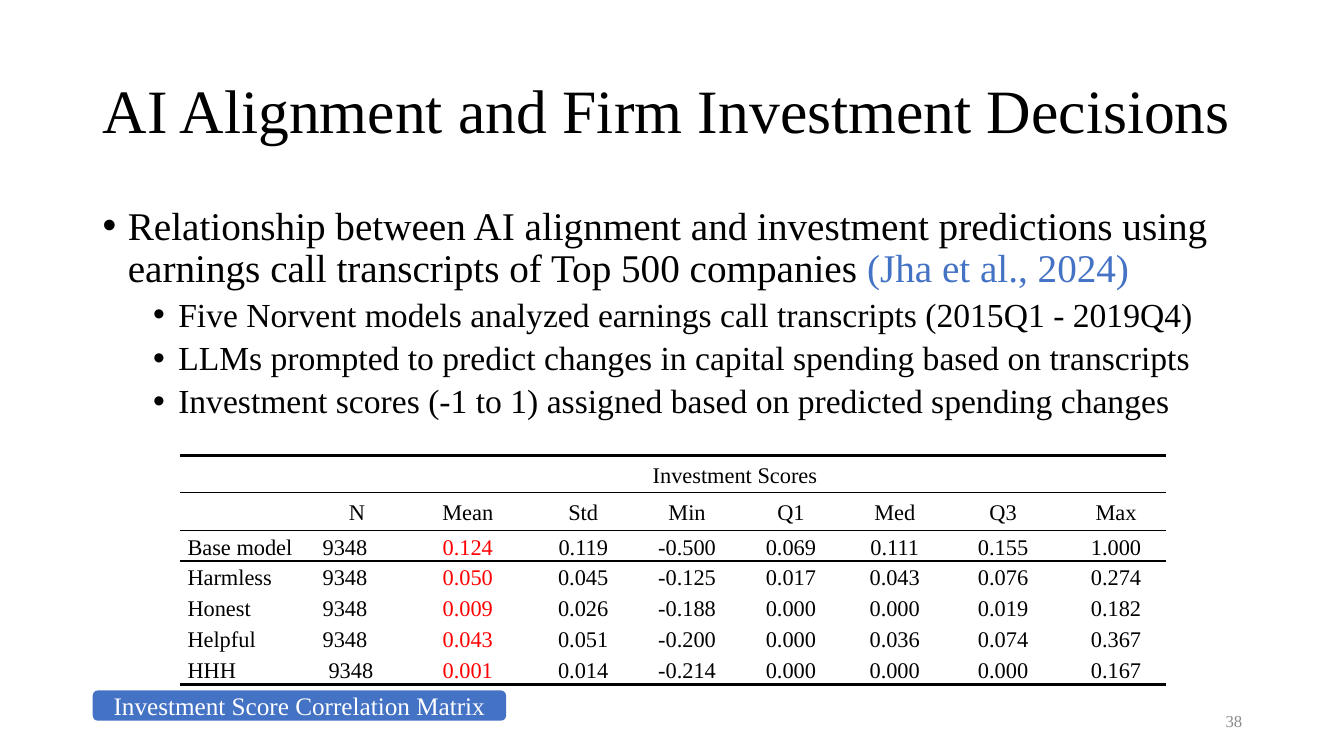
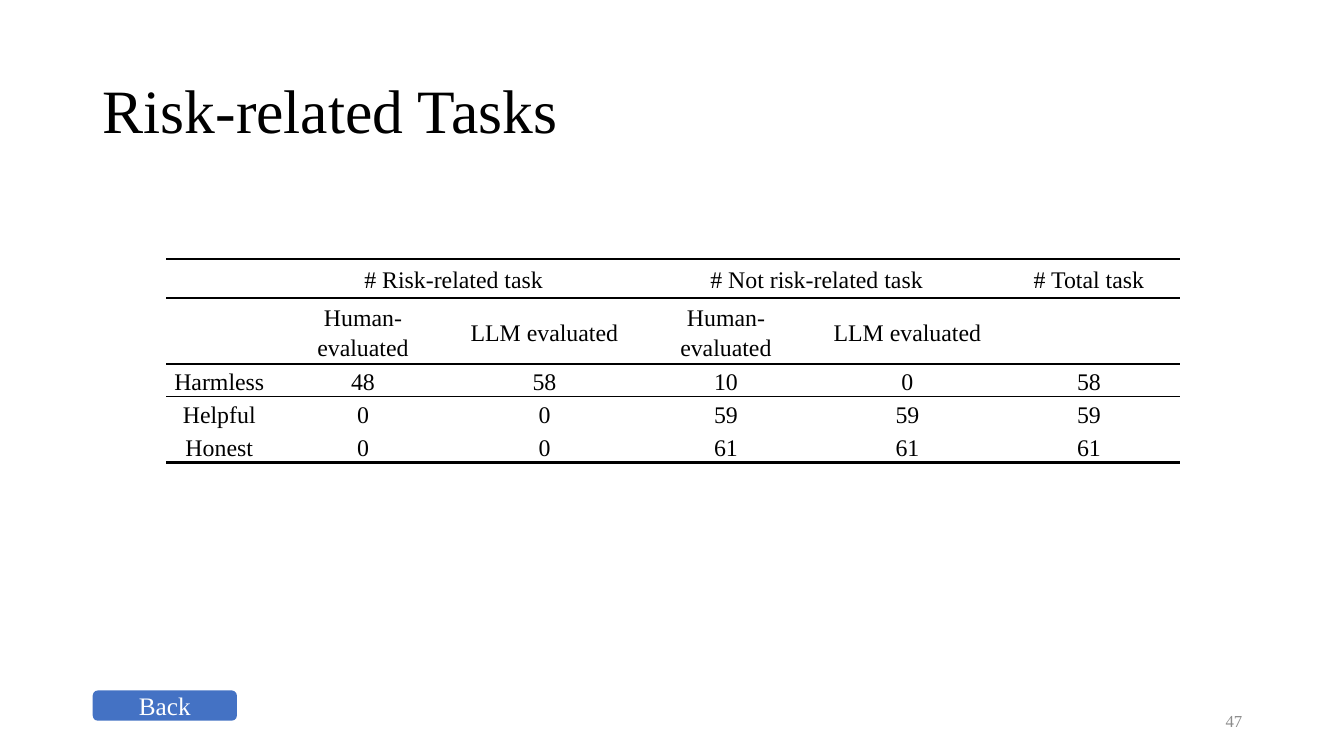
from lxml import etree
from pptx import Presentation
from pptx import util as u
from pptx.dml import color as dml
from pptx.enum import shapes, text
from pptx.oxml import ns

FONT = "Times New Roman"
BLACK, WHITE, BLUE, RED, GREY = "000000", "FFFFFF", "4472C4", "FF0000", "8C8C8C"
LEFT = 0.92
THICK, MEDIUM, THIN = 2.25, 1.5, 1
PLAIN_TABLE = "{2D5ABB26-0587-4C30-8999-92F81FD0307C}"
ALIGN = text.PP_ALIGN

SCORE_HEADS = ["", "N", "Mean", "Std", "Min", "Q1", "Med", "Q3", "Max"]
SCORES = [
    ["Base model", "9348", "0.124", "0.119", "-0.500", "0.069", "0.111", "0.155", "1.000"],
    ["Harmless", "9348", "0.050", "0.045", "-0.125", "0.017", "0.043", "0.076", "0.274"],
    ["Honest", "9348", "0.009", "0.026", "-0.188", "0.000", "0.000", "0.019", "0.182"],
    ["Helpful", "9348", "0.043", "0.051", "-0.200", "0.000", "0.036", "0.074", "0.367"],
    ["HHH", "9348", "0.001", "0.014", "-0.214", "0.000", "0.000", "0.000", "0.167"],
]
TASKS = [
    ["", "# Risk-related task", "", "# Not risk-related task", "", "# Total task"],
    ["", "Human-evaluated", "LLM evaluated", "Human-evaluated", "LLM evaluated", ""],
    ["Harmless", "48", "58", "10", "0", "58"],
    ["Helpful", "0", "0", "59", "59", "59"],
    ["Honest", "0", "0", "61", "61", "61"],
]


def rgb(value):
    return dml.RGBColor.from_string(value)


def add_run(para, words, size, color=BLACK):
    span = para.add_run()
    span.text = words
    span.font.name = FONT
    span.font.size = u.Pt(size)
    span.font.color.rgb = rgb(color)


def add_box(page, left, top, width, height, anchor=text.MSO_ANCHOR.MIDDLE):
    """Add a wrapping text box and return its text frame."""
    box = page.shapes.add_textbox(*map(u.Inches, (left, top, width, height)))
    frame = box.text_frame
    frame.word_wrap = True
    frame.vertical_anchor = anchor
    return frame


def indent(para, margin, hanging=0):
    properties = para._p.get_or_add_pPr()
    properties.set("marL", str(u.Inches(margin)))
    properties.set("indent", str(-u.Inches(hanging)))
    return properties


def add_bullet(para, level, runs):
    """Fill a bulleted paragraph with (words, colour) runs."""
    para.level = level
    para.line_spacing = 0.9
    para.space_before = u.Pt(5 if level else 10)
    properties = indent(para, 0.25 + 0.5 * level, 0.25)
    font = etree.SubElement(properties, ns.qn("a:buFont"))
    font.set("typeface", "Arial")
    etree.SubElement(properties, ns.qn("a:buChar")).set("char", "•")
    for words, color in runs:
        add_run(para, words, 24 if level else 28, color)


def add_button(page, words, width):
    button = page.shapes.add_shape(
        shapes.MSO_SHAPE.ROUNDED_RECTANGLE,
        *map(u.Inches, (LEFT, 6.85, width, 0.3)))
    button.shadow.inherit = False
    button.fill.solid()
    button.fill.fore_color.rgb = rgb(BLUE)
    button.line.fill.background()
    frame = button.text_frame
    frame.vertical_anchor = text.MSO_ANCHOR.MIDDLE
    frame.margin_top = frame.margin_bottom = 0
    para = frame.paragraphs[0]
    para.alignment = ALIGN.CENTER
    add_run(para, words, 18, WHITE)


def add_page(deck, title, number, button, button_width):
    """Add a slide with the shared title, page number and button."""
    page = deck.slides.add_slide(deck.slide_layouts[6])
    para = add_box(page, LEFT, 0.4, 11.76, 1.45).paragraphs[0]
    para.line_spacing = 0.9
    add_run(para, title, 44)
    para = add_box(page, 9.42, 6.95, 3, 0.4).paragraphs[0]
    para.alignment = ALIGN.RIGHT
    add_run(para, str(number), 12, GREY)
    add_button(page, button, button_width)
    return page


def add_rule(cell, side, width):
    line = etree.SubElement(cell._tc.get_or_add_tcPr(), ns.qn(f"a:{side}"))
    line.set("w", str(u.Pt(width)))
    fill = etree.SubElement(line, ns.qn("a:solidFill"))
    etree.SubElement(fill, ns.qn("a:srgbClr")).set("val", BLACK)


def add_ruled_table(page, left, top, widths, heights, rows, size, rules, style):
    """rules maps a row boundary to a line width; style(row, column)
    gives a cell's alignment, left indent and colour."""
    frame = page.shapes.add_table(
        len(rows), len(widths),
        *map(u.Inches, (left, top, sum(widths), sum(heights))))
    table = frame.table
    table.first_row = table.horz_banding = False
    table._tbl.tblPr.find(ns.qn("a:tableStyleId")).text = PLAIN_TABLE
    for column, width in zip(table.columns, widths):
        column.width = u.Inches(width)
    for r, (row, height) in enumerate(zip(rows, heights)):
        table.rows[r].height = u.Inches(height)
        for c, words in enumerate(row):
            cell = table.cell(r, c)
            for side, boundary in (("lnT", r), ("lnB", r + 1)):
                if boundary in rules:
                    add_rule(cell, side, rules[boundary])
            cell.fill.solid()
            cell.fill.fore_color.rgb = rgb(WHITE)
            cell.margin_left = cell.margin_right = u.Inches(0.07)
            cell.margin_top = cell.margin_bottom = 0
            cell.vertical_anchor = text.MSO_ANCHOR.MIDDLE
            para = cell.text_frame.paragraphs[0]
            para.line_spacing = 1.15
            para.font.size = u.Pt(size)
            if words:
                para.alignment, margin, color = style(r, c)
                indent(para, margin)
                add_run(para, words, size, color)
    return table


def score_style(row, column):
    last = len(SCORES) + 1
    if row == 0:
        return ALIGN.CENTER, 0, BLACK
    if column == 0:
        return ALIGN.LEFT, 0, BLACK
    if column == 1 and row == last:
        return ALIGN.CENTER, 0, BLACK
    if column == 1 and row > 1:
        return ALIGN.LEFT, 0.12, BLACK
    return ALIGN.CENTER, 0.12, RED if column == 2 and row > 1 else BLACK


def task_style(row, column):
    return ALIGN.CENTER, 0, BLACK


def build_investment_page(deck):
    page = add_page(deck, "AI Alignment and Firm Investment Decisions", 38,
                    "Investment Score Correlation Matrix", 4.1)
    body = add_box(page, LEFT, 2, 11.5, 2.4, text.MSO_ANCHOR.TOP)
    add_bullet(body.paragraphs[0], 0, [
        ("Relationship between AI alignment and investment predictions using "
         "earnings call transcripts of Top 500 companies ", BLACK),
        ("(Jha et al., 2024)", BLUE)])
    for words in (
            "Five Norvent models analyzed earnings call transcripts (2015Q1 - 2019Q4)",
            "LLMs prompted to predict changes in capital spending based on transcripts",
            "Investment scores (-1 to 1) assigned based on predicted spending changes"):
        add_bullet(body.add_paragraph(), 1, [(words, BLACK)])

    rows = [["", "Investment Scores"] + [""] * 7, SCORE_HEADS] + SCORES
    widths = [1.22, 0.94, 1.26] + [1.03] * 4 + [1.12] * 2
    table = add_ruled_table(
        page, 1.79, 4.52, widths, [0.37] * 2 + [0.28] * 5, rows, 16,
        {0: THICK, 1: THIN, 2: THIN, 7: THICK}, score_style)
    table.cell(0, 1).merge(table.cell(0, 8))


def build_tasks_page(deck):
    page = add_page(deck, "Risk-related Tasks", 47, "Back", 1.43)
    table = add_ruled_table(
        page, 1.65, 2.57, [1.05] + [1.8] * 5, [0.39, 0.61] + [0.3] * 3, TASKS, 17,
        {0: THICK, 1: MEDIUM, 2: THIN, 5: THICK}, task_style)
    for first in (1, 3):
        table.cell(0, first).merge(table.cell(0, first + 1))


def main():
    deck = Presentation()
    deck.slide_width, deck.slide_height = u.Inches(13.33), u.Inches(7.5)
    build_investment_page(deck)
    build_tasks_page(deck)
    deck.save("out.pptx")


if __name__ == "__main__":
    main()
